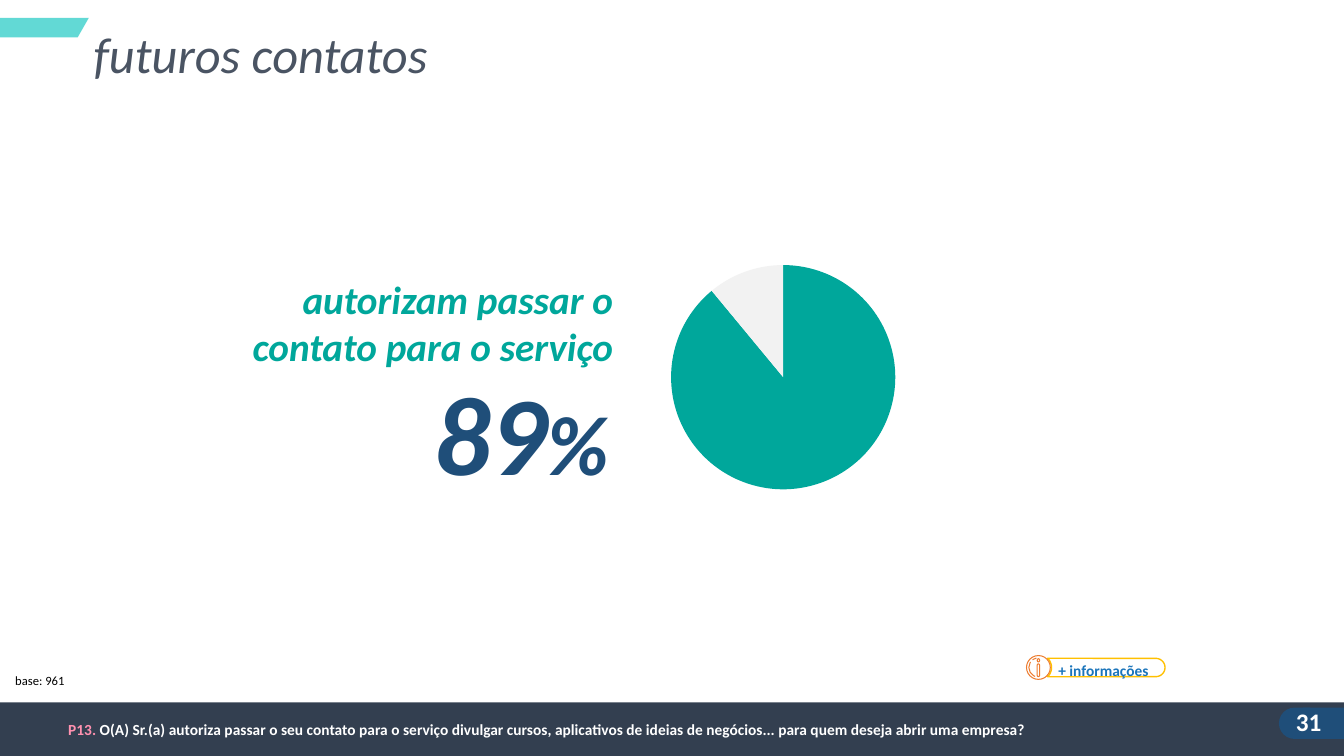
from dataclasses import dataclass
from math import cos, radians, sin

from lxml import etree
from pptx import Presentation
from pptx.chart.data import CategoryChartData
from pptx.dml.color import RGBColor
from pptx.enum.chart import XL_CHART_TYPE as CHART
from pptx.enum.shapes import MSO_SHAPE as SHAPE
from pptx.enum.text import PP_ALIGN as ALIGN
from pptx.oxml import parse_xml
from pptx.util import Cm, Pt


@dataclass(frozen=True)
class Theme:
    font: str = "Calibri"
    bar: str = "333F50"
    navy: str = "1F4E79"
    teal: str = "00A79B"
    aqua: str = "62D9D5"
    grey: str = "F2F2F2"
    title: str = "4A5463"
    pink: str = "FF91B0"
    gold: str = "FFC000"
    orange: str = "ED7D31"
    blue: str = "1B75BB"
    white: str = "FFFFFF"
    black: str = "000000"
    title_size: int = 36
    claim_size: int = 28
    value_size: int = 80
    percent_size: int = 60
    page_size: int = 18
    note_size: int = 11
    chart_size: int = 10
    base_size: int = 9


T = Theme()


def paint(sp, fill=None, line=None, width=1):
    """Give a shape a flat fill and outline; None leaves that part empty."""
    sp.shadow.inherit = False
    if fill:
        sp.fill.solid()
        sp.fill.fore_color.rgb = RGBColor.from_string(fill)
    else:
        sp.fill.background()
    if line:
        sp.line.color.rgb = RGBColor.from_string(line)
        sp.line.width = Pt(width)
    else:
        sp.line.fill.background()


def draw_polygon(points):
    (x, y), *rest = [(Cm(px), Cm(py)) for px, py in points]
    builder = s.shapes.build_freeform(x, y)
    builder.add_line_segments(rest, close=True)
    return builder.convert_to_shape()


prs = Presentation()
prs.slide_width, prs.slide_height = Cm(33.87), Cm(19.05)
s = prs.slides.add_slide(prs.slide_layouts[6])

# Footer bar and page tab
for kind, box, turn, color in [
    (SHAPE.RECTANGLE, (0, 17.7, 33.87, 1.35), 0, T.bar),
    (SHAPE.FLOWCHART_DELAY, (32.23, 17.83, 0.79, 0.79), 180, T.navy),
    (SHAPE.RECTANGLE, (32.84, 17.83, 1.03, 0.79), 0, T.navy),
]:
    sp = s.shapes.add_shape(kind, *map(Cm, box))
    sp.rotation = turn
    paint(sp, color)

# Title accent
paint(draw_polygon([(0, 0.45), (2.24, 0.45), (1.96, 0.94), (0, 0.94)]), T.aqua)

# Pie of consent
data = CategoryChartData()
data.categories = ["1", "2"]
data.add_series("Series 1", (89, 11))
frame = s.shapes.add_chart(CHART.PIE, Cm(16.38), Cm(6.3), Cm(6.65), Cm(6.35), data)
chart = frame.chart
chart.has_legend = chart.has_title = False
chart.font.name, chart.font.size = T.font, Pt(T.chart_size)
chart.font.color.rgb = RGBColor.from_string(T.black)
plot = chart.plots[0]
plot.vary_by_categories = True
for i, color in enumerate([T.teal, T.grey]):
    fmt = plot.series[0].points[i].format
    fmt.fill.solid()
    fmt.fill.fore_color.rgb = RGBColor.from_string(color)
    fmt.line.fill.background()

C_NS = "http://schemas.openxmlformats.org/drawingml/2006/chart"
area = chart.element.find(f".//{{{C_NS}}}plotArea")
for old in area.findall(f"{{{C_NS}}}layout"):
    area.remove(old)
layout = parse_xml(f'<c:layout xmlns:c="{C_NS}"><c:manualLayout/></c:layout>')
for tag, val in [("layoutTarget", "inner"), ("xMode", "edge"), ("yMode", "edge"),
                 ("x", 0.08), ("y", 0.06), ("w", 0.85), ("h", 0.89)]:
    etree.SubElement(layout[0], f"{{{C_NS}}}{tag}").set("val", str(val))
area.insert(0, layout)

# Pill, hollowed on the left around the information icon
ICON_X, ICON_Y = 26.17, 16.82
PILL_R, PILL_END = 0.23, 29.13
right = [(PILL_END + PILL_R * cos(radians(a)), ICON_Y + PILL_R * sin(radians(a)))
         for a in range(-90, 91, 10)]
left = [(ICON_X + 0.33 * cos(radians(a)), ICON_Y + 0.33 * sin(radians(a)))
        for a in range(45, -46, -9)]
paint(draw_polygon(right + left), line=T.gold)

# Icon: ring, letter and two glints, all centred on the same axis
for kind, w, h, dy, adjust in [
    (SHAPE.OVAL, 0.6, 0.6, 0, []),
    (SHAPE.ROUNDED_RECTANGLE, 0.06, 0.32, 0.07, [0.5]),
    (SHAPE.OVAL, 0.06, 0.08, -0.18, []),
    (SHAPE.ARC, 0.48, 0.48, 0, [110, 215]),
    (SHAPE.ARC, 0.48, 0.48, 0, [232, 258]),
]:
    sp = s.shapes.add_shape(kind, Cm(ICON_X - w / 2), Cm(ICON_Y + dy - h / 2), Cm(w), Cm(h))
    for i, value in enumerate(adjust):
        sp.adjustments[i] = value * 0.6 if kind == SHAPE.ARC else value
    paint(sp, line=T.orange, width=0.75)

# Texts: box, paragraph format, runs of (text, size, colour, bold, italic)
QUESTION = ("O(A) Sr.(a) autoriza passar o seu contato para o serviço divulgar cursos, "
            "aplicativos de ideias de negócios... para quem deseja abrir uma empresa?")
for box, wrap, layout_format, runs in [
    ((32.41, 17.68, 1.46, 1.02), True, {}, [("31", T.page_size, T.white, True, False)]),
    ((10.69, 9.04, 5.31, 3.68), True, {},
     [("89", T.value_size, T.navy, True, True), ("%", T.percent_size, T.navy, True, True)]),
    ((2.11, 0.46, 13.89, 1.8), True, {},
     [("futuros contatos", T.title_size, T.title, False, True)]),
    ((5.77, 6.81, 9.93, 2.64), True, {"alignment": ALIGN.RIGHT},
     [("autorizam passar o contato para o serviço", T.claim_size, T.teal, True, True)]),
    ((1.47, 18.01, 26.95, 0.74), True, {},
     [("P13. ", T.note_size, T.pink, True, False),
      (QUESTION, T.note_size, T.white, True, False)]),
    ((0.13, 16.84, 1.75, 0.64), False, {"alignment": ALIGN.CENTER},
     [("base: 961", T.base_size, T.black, False, False)]),
    ((26.42, 16.31, 3.35, 0.97), True, {"line_spacing": 1.5},
     [("+ informações", T.note_size, T.blue, True, False)]),
]:
    tf = s.shapes.add_textbox(*map(Cm, box)).text_frame
    tf.word_wrap = wrap
    p = tf.paragraphs[0]
    for name, value in layout_format.items():
        setattr(p, name, value)
    for text, size, color, bold, italic in runs:
        r = p.add_run()
        r.text = text
        font_format = {"name": T.font, "size": Pt(size), "bold": bold, "italic": italic}
        for name, value in font_format.items():
            setattr(r.font, name, value)
        r.font.color.rgb = RGBColor.from_string(color)

prs.save("out.pptx")
